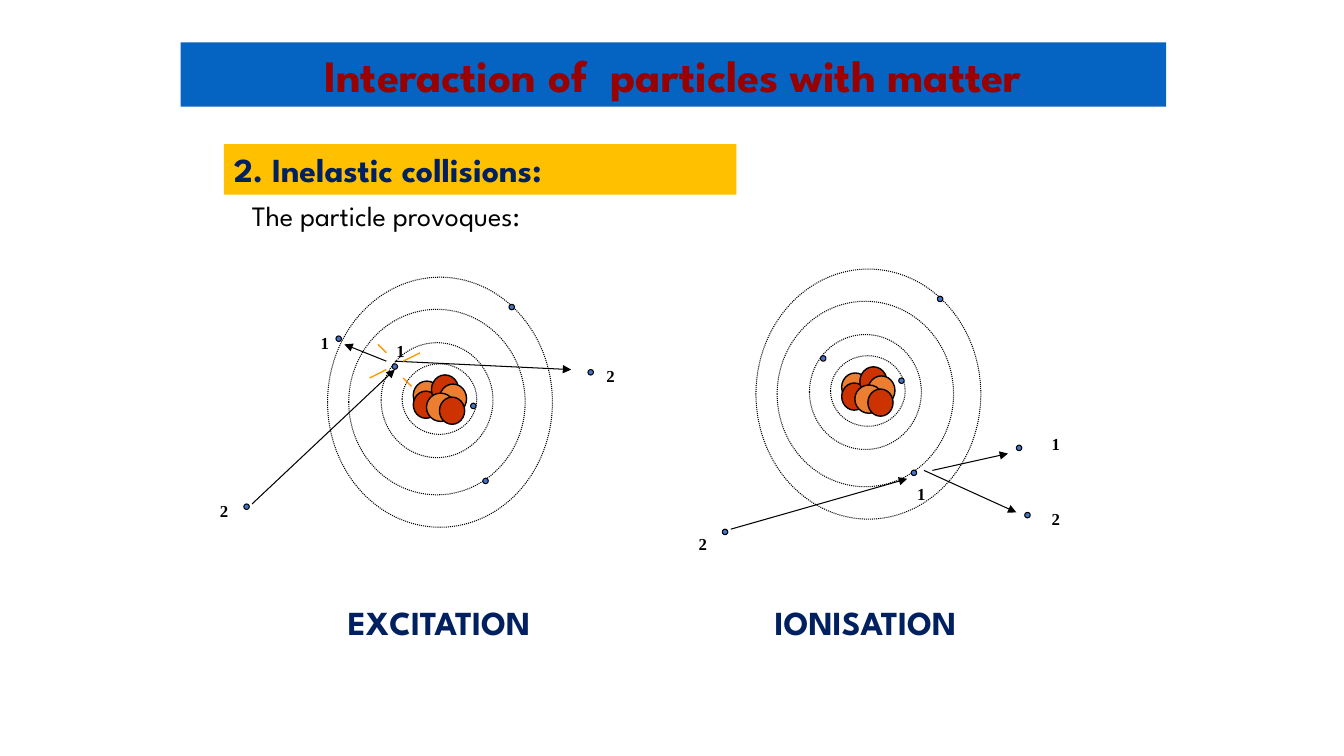
import pptx
import pptx.util
import pptx.dml.color
import pptx.enum.dml
import pptx.enum.shapes
import pptx.enum.text
import pptx.oxml
import pptx.oxml.ns

Pt = pptx.util.Pt
FORM = pptx.enum.shapes.MSO_SHAPE
ALIGN = pptx.enum.text.PP_ALIGN
HEAD = "League Spartan"
SERIF = "Times New Roman"
HUES = {
    "blue": "0563C1", "gold": "FFC000", "maroon": "990000", "navy": "002060",
    "black": "000000", "orange": "ED7D31", "red": "CC3300",
    "dot": "4472C4", "spark": "FF9900",
}
SHELLS = [(15.1, 23, 126, 132.5), (38.2, 46.8, 79.9, 82.1),
          (0, 0, 160.6, 178.6), (53.3, 61.9, 53.3, 50.4)]
CORE = [
    ("orange", 61.2, 74.2, 19.4, 20.2),
    ("red", 61.2, 81.4, 18, 19.4),
    ("red", 74.2, 69.8, 19.4, 20.9),
    ("orange", 79.9, 76.3, 19.4, 20.9),
    ("orange", 70.6, 82.8, 20.2, 20.2),
    ("red", 79.9, 85.7, 18, 19.4),
]
BOUND = [(129.6, 19.4), (110.9, 143.6), (46.1, 61.9)]
ATOMS = [(234, 198), (540, 192.2)]
FREE = [(336.2, 288), (174.2, 360), (420, 264), (240, 240),
        (642, 270), (516, 378), (726, 318), (732, 366)]
RAYS = [(180, 360, 282, 264), (276, 258, 246, 246), (282, 258, 408, 264),
        (522, 378, 648, 342), (660, 336, 726, 366), (666, 336, 720, 324)]
SPARKS = [(288, 270, 294, 276), (288, 258, 300, 252),
          (264, 270, 276, 264), (276, 252, 270, 246)]
LABELS = [
    ("1", 222, 234, 14.4), ("1", 276, 240, 14.4),
    ("2", 150, 354, 24), ("2", 426, 258, 24),
    ("2", 492, 378, 24), ("2", 744, 360, 24),
    ("1", 648, 342, 24), ("1", 744, 306, 24),
]


def tint(name):
    return pptx.dml.color.RGBColor.from_string(HUES[name])


def add_text(slide, text, left, top, width, height, size, font=HEAD,
             hue="navy", bold=True, align=ALIGN.LEFT, fill=None):
    box = slide.shapes.add_textbox(Pt(left), Pt(top), Pt(width), Pt(height))
    if fill:
        box.fill.solid()
        box.fill.fore_color.rgb = tint(fill)
    frame = box.text_frame
    frame.word_wrap = True
    if align == ALIGN.LEFT:
        frame.margin_right = 0
    para = frame.paragraphs[0]
    para.alignment = align
    run = para.add_run()
    run.text = text
    run.font.name = font
    run.font.size = Pt(size)
    run.font.bold = bold
    run.font.color.rgb = tint(hue)


def add_oval(shapes, left, top, width, height, fill=None, weight=0.75):
    oval = shapes.add_shape(FORM.OVAL, Pt(left), Pt(top), Pt(width), Pt(height))
    oval.shadow.inherit = False
    oval.line.color.rgb = tint("black")
    oval.line.width = Pt(weight)
    if fill:
        oval.fill.solid()
        oval.fill.fore_color.rgb = tint(fill)
    else:
        oval.fill.background()
        oval.line.dash_style = pptx.enum.dml.MSO_LINE.ROUND_DOT


def add_dot(slide, left, top):
    add_oval(slide.shapes, left, top, 3.9, 3.9, "dot")


def add_line(slide, ends, hue, weight, arrow=False):
    line = slide.shapes.add_connector(
        pptx.enum.shapes.MSO_CONNECTOR.STRAIGHT, *[Pt(end) for end in ends])
    line.line.color.rgb = tint(hue)
    line.line.width = Pt(weight)
    if arrow:
        tip = pptx.oxml.parse_xml(
            f'<a:tailEnd {pptx.oxml.ns.nsdecls("a")} type="triangle"/>')
        line.line._get_or_add_ln().append(tip)
    line._element.spPr.append(
        pptx.oxml.parse_xml(f'<a:effectLst {pptx.oxml.ns.nsdecls("a")}/>'))


def add_atom(slide, left, top):
    group = slide.shapes.add_group_shape()
    for fill, x, y, width, height in CORE:
        add_oval(group.shapes, left + x, top + y, width, height, fill, 1)
    for x, y, width, height in SHELLS:
        add_oval(slide.shapes, left + x, top + y, width, height)
    for x, y in BOUND:
        add_dot(slide, left + x, top + y)


def main():
    deck = pptx.Presentation()
    deck.slide_width = Pt(960)
    deck.slide_height = Pt(540)
    slide = deck.slides.add_slide(deck.slide_layouts[6])

    add_text(slide, "Interaction of  particles with matter", 129, 30.2, 704, 46,
             32, hue="maroon", align=ALIGN.CENTER, fill="blue")
    add_text(slide, "2. Inelastic collisions:", 160, 103, 366, 36, 24, fill="gold")
    add_text(slide, "The particle provoques:", 172.8, 138.2, 606, 31, 20,
             hue="black", bold=False)

    for left, top in ATOMS:
        add_atom(slide, left, top)
    for left, top in FREE:
        add_dot(slide, left, top)
    for ends in RAYS:
        add_line(slide, ends, "black", 0.75, arrow=True)
    for ends in SPARKS:
        add_line(slide, ends, "spark", 1)
    for text, left, top, width in LABELS:
        add_text(slide, text, left, top, width, 21.6, 12, font=SERIF, hue="black")
    for text, left in [("EXCITATION", 211.7), ("IONISATION", 516.2)]:
        add_text(slide, text, left, 426.2, 204, 36, 24, align=ALIGN.CENTER)

    deck.save("out.pptx")


if __name__ == "__main__":
    main()
